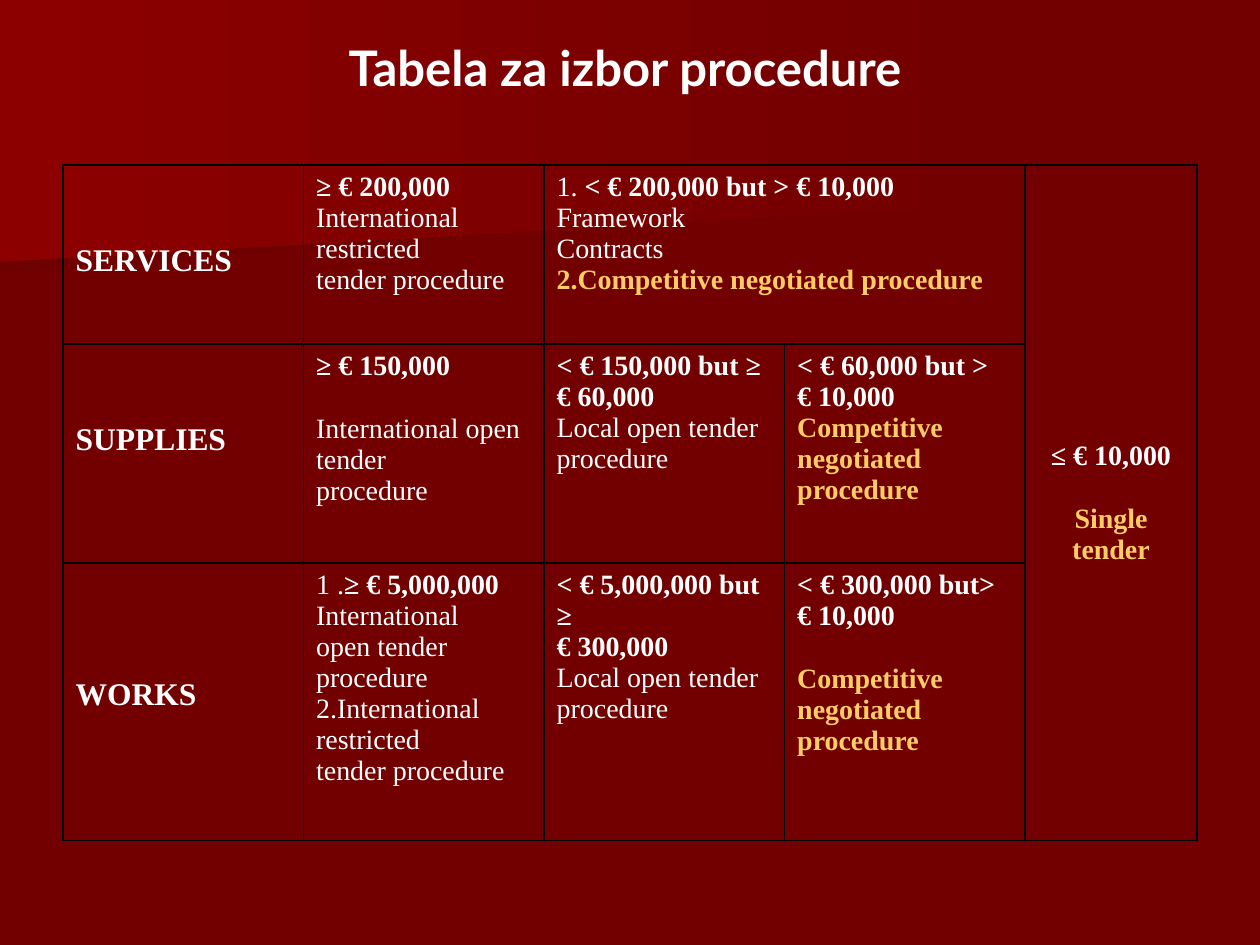
from pptx import Presentation
from pptx.dml.color import RGBColor
from pptx.enum.text import MSO_ANCHOR as ANCHOR, PP_ALIGN as ALIGN
from pptx.oxml import parse_xml
from pptx.oxml.ns import nsdecls
from pptx.util import Cm, Pt

WHITE, GOLD, BLACK, DARK = "FFFFFF", "FFCC66", "000000", "720000"
PLAIN, BOLD, ACCENT = (False, WHITE), (True, WHITE), (True, GOLD)


def rgb(value):
    return RGBColor.from_string(value)


class Deck:
    """Hold the text style and the current slide, and add elements to it."""

    font, size, line_gap = "Times New Roman", 16, Pt(18.4)

    def __init__(self, prs):
        self.s = prs.slides.add_slide(prs.slide_layouts[6])
        fill = self.s.background.fill
        fill.solid()
        fill.fore_color.rgb = rgb(DARK)

    def run(self, p, text, style=BOLD, size=None, font=None):
        r = p.add_run()
        r.text = text
        r.font.name = font or self.font
        r.font.size = Pt(size or self.size)
        r.font.bold, color = style
        r.font.color.rgb = rgb(color)

    def band(self, points, start):
        first, *rest = [(Cm(x), Cm(y)) for x, y in points]
        fb = self.s.shapes.build_freeform(*first)
        fb.add_line_segments(rest, close=True)
        sp = fb.convert_to_shape()
        sp.shadow.inherit = False
        sp.line.fill.background()
        sp.fill.gradient()
        sp.fill.gradient_angle = 0
        for stop, color in zip(sp.fill.gradient_stops, (start, DARK)):
            stop.color.rgb = rgb(color)

    def title(self, text, left, top, width, height):
        sp = self.s.shapes.add_textbox(Cm(left), Cm(top), Cm(width), Cm(height))
        tf = sp.text_frame
        tf.word_wrap = True
        self.run(tf.paragraphs[0], text, size=28, font="Lato")

    def table(self, left, top, widths, heights):
        frame = self.s.shapes.add_table(
            len(heights), len(widths), Cm(left), Cm(top),
            Cm(sum(widths)), Cm(sum(heights)))
        tbl = frame.table
        tbl.first_row = tbl.horz_banding = False
        for col, width in zip(tbl.columns, widths):
            col.width = Cm(width)
        for row, height in zip(tbl.rows, heights):
            row.height = Cm(height)
        for cell in tbl.iter_cells():
            self.border(cell)
            cell.fill.background()
        return tbl

    def border(self, cell):
        tc_pr = cell._tc.get_or_add_tcPr()
        for side in "LRTB":
            tc_pr.append(parse_xml(
                f'<a:ln{side} {nsdecls("a")} w="{Pt(1)}"><a:solidFill>'
                f'<a:srgbClr val="{BLACK}"/></a:solidFill></a:ln{side}>'))

    def cell(self, cell, paragraphs, gap_before=None, align=ALIGN.LEFT, size=None):
        tf = cell.text_frame
        for i, runs in enumerate(paragraphs):
            p = tf.add_paragraph() if i else tf.paragraphs[0]
            p.alignment = align
            if i == gap_before:
                p.space_before = self.line_gap
            for text, style in runs:
                self.run(p, text, style, size)

    def heading(self, cell, text, margin_top):
        cell.margin_top = Cm(margin_top)
        self.cell(cell, [[(text, BOLD)]], align=ALIGN.JUSTIFY, size=18)


def main():
    prs = Presentation()
    prs.slide_width, prs.slide_height = Cm(25.4), Cm(19.05)
    deck = Deck(prs)
    deck.band([(19.76, 3.89), (0, 5.51), (0, 2.57), (19.79, 2.57)], "6F0000")
    deck.band([(20.12, 4.11), (0, 5.28), (0, 0), (20.12, 0)], "8C0000")
    deck.title("Tabela za izbor procedure", 6.78, 0.64, 12.7, 1.45)

    tbl = deck.table(1.27, 3.33, [4.85] * 4 + [3.46], [3.6, 4.42, 5.59])
    tbl.cell(0, 2).merge(tbl.cell(0, 3))
    tbl.cell(0, 4).merge(tbl.cell(2, 4))

    headings = [("SERVICES", 1.58), ("SUPPLIES", 1.58), ("WORKS", 2.31)]
    for row, (text, margin_top) in enumerate(headings):
        deck.heading(tbl.cell(row, 0), text, margin_top)

    local = [[("Local open tender", PLAIN)], [("procedure", PLAIN)]]
    negotiated = [[("Competitive", ACCENT)], [("negotiated procedure", ACCENT)]]
    procedures = [
        (0, 1, [[("≥ € 200,000", BOLD)],
                [("International restricted", PLAIN)],
                [("tender procedure", PLAIN)]], None),
        (0, 2, [[("1. ", PLAIN), ("< € 200,000 but > € 10,000 ", BOLD),
                 ("Framework", PLAIN)],
                [("Contracts", PLAIN)],
                [("2.Competitive negotiated procedure", ACCENT)]], None),
        (1, 1, [[("≥ € 150,000", BOLD)],
                [("International open tender", PLAIN)],
                [("procedure", PLAIN)]], 1),
        (1, 2, [[("< € 150,000 but ≥", BOLD)], [("€ 60,000", BOLD)]] + local, None),
        (1, 3, [[("< € 60,000 but >", BOLD)], [("€ 10,000", BOLD)]] + negotiated, None),
        (2, 1, [[("1 .", PLAIN), ("≥ € 5,000,000 ", BOLD), ("International", PLAIN)],
                [("open tender procedure", PLAIN)],
                [("2.International restricted", PLAIN)],
                [("tender procedure", PLAIN)]], None),
        (2, 2, [[("< € 5,000,000 but ≥", BOLD)], [("€ 300,000", BOLD)]] + local, None),
        (2, 3, [[("< € 300,000 but>", BOLD)], [("€ 10,000", BOLD)]] + negotiated, 2),
    ]
    for row, col, paragraphs, gap_before in procedures:
        deck.cell(tbl.cell(row, col), paragraphs, gap_before)

    single = tbl.cell(0, 4)
    single.vertical_anchor = ANCHOR.MIDDLE
    deck.cell(single, [[("≤ € 10,000", BOLD)], [("Single tender", ACCENT)]],
              1, ALIGN.CENTER)
    prs.save("out.pptx")


if __name__ == "__main__":
    main()
